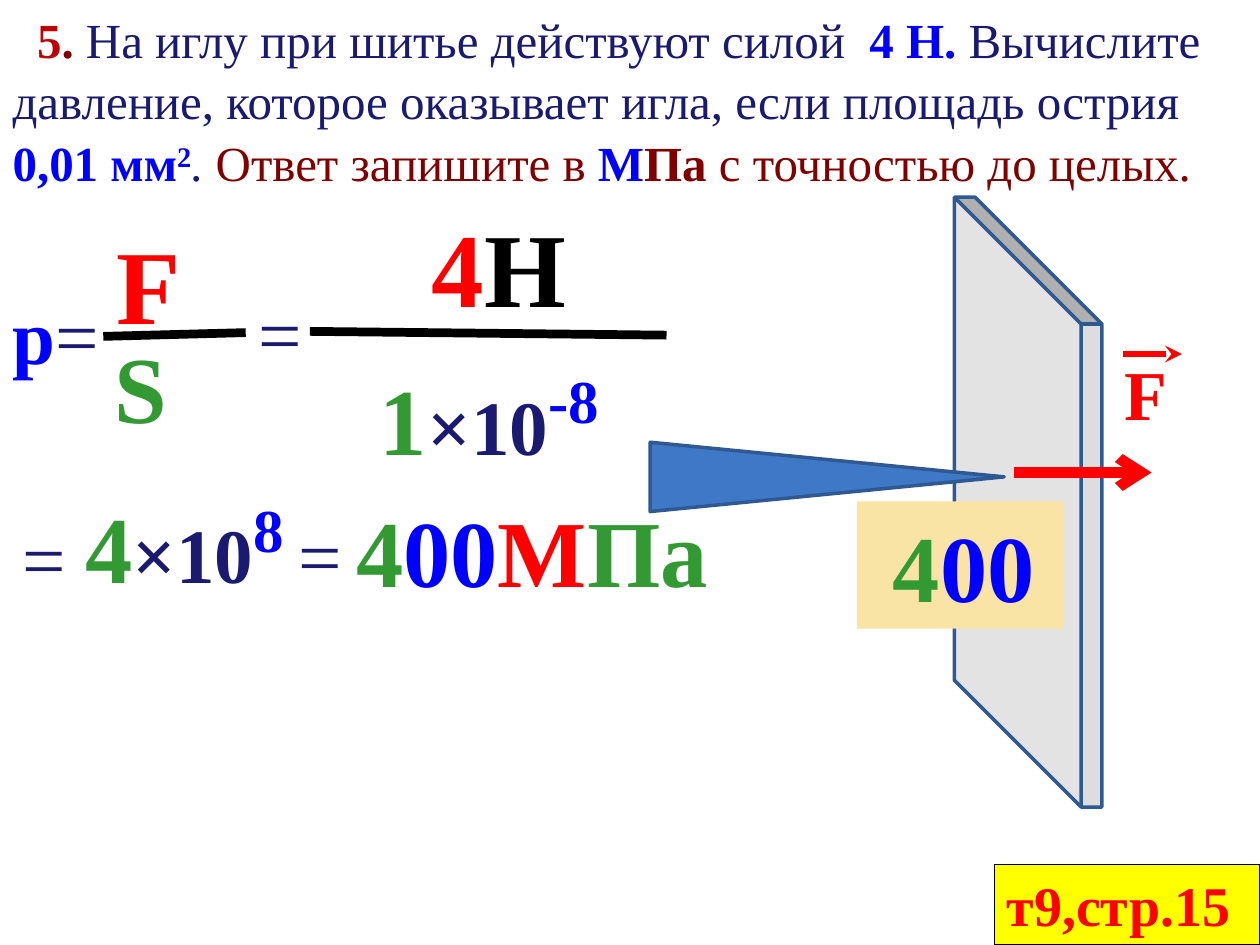
from lxml.etree import SubElement
from pptx import Presentation
from pptx.dml.color import RGBColor
from pptx.enum.shapes import MSO_CONNECTOR, MSO_SHAPE
from pptx.enum.text import MSO_ANCHOR, MSO_AUTO_SIZE, PP_ALIGN
from pptx.oxml.ns import qn
from pptx.util import Inches, Pt

WIDTH, HEIGHT = Inches(10), Inches(7.5)
COLUMNS, ROWS = 100, 75

RED = RGBColor(0xFF, 0x00, 0x00)
DARK_RED = RGBColor(0xC0, 0x00, 0x00)
MAROON = RGBColor(0x80, 0x00, 0x00)
BLUE = RGBColor(0x00, 0x00, 0xFF)
NAVY = RGBColor(0x1A, 0x1A, 0x70)
GREEN = RGBColor(0x33, 0x99, 0x33)
BLACK = RGBColor(0x00, 0x00, 0x00)
YELLOW = RGBColor(0xFF, 0xFF, 0x00)
SAND = RGBColor(0xF9, 0xE3, 0xA5)
GREY = RGBColor(0xDD, 0xDD, 0xDD)
STEEL = RGBColor(0x3E, 0x78, 0xC6)
OUTLINE = RGBColor(0x2E, 0x59, 0x92)


class Board:
    """Draws on one slide; lengths are columns and rows of a 100 by 75 grid."""

    font = "Times New Roman"

    def __init__(self, deck):
        self.slide = deck.slides.add_slide(deck.slide_layouts[5])
        self.shapes = self.slide.shapes

    def place(self, left, top, width, height):
        return (int(WIDTH * left / COLUMNS), int(HEIGHT * top / ROWS),
                int(WIDTH * width / COLUMNS), int(HEIGHT * height / ROWS))

    def fill_frame(self, frame, spans, wrap=True, size_to_text=True):
        """Fill a text frame with (text, size, colour, format) spans."""
        layout = {
            "word_wrap": wrap,
            "vertical_anchor": MSO_ANCHOR.TOP,
            "auto_size": (MSO_AUTO_SIZE.SHAPE_TO_FIT_TEXT if size_to_text
                          else MSO_AUTO_SIZE.NONE),
        }
        for name, value in layout.items():
            setattr(frame, name, value)
        para = frame.paragraphs[0]
        para.alignment = PP_ALIGN.LEFT
        for text, size, colour, *extra in spans:
            span = para.add_run()
            span.text = text
            look = {"name": self.font, "size": Pt(size), "bold": "plain" not in extra,
                    "italic": "italic" in extra}
            for name, value in look.items():
                setattr(span.font, name, value)
            span.font.color.rgb = colour
            if "super" in extra:
                span.font._element.set("baseline", "30000")
        return para

    def title(self, area, spans):
        title = self.shapes.title
        title.left, title.top, title.width, title.height = self.place(*area)
        para = self.fill_frame(title.text_frame, spans, size_to_text=False)
        spacing = {"space_before": Pt(5), "space_after": Pt(10), "line_spacing": 1.05}
        for name, value in spacing.items():
            setattr(para, name, value)

    def text(self, area, *spans, wrap=True):
        box = self.shapes.add_textbox(*self.place(*area))
        self.fill_frame(box.text_frame, spans, wrap)
        return box

    def shape(self, kind, area, fill, line=None, line_width=2, rotation=0, spans=()):
        shape = self.shapes.add_shape(kind, *self.place(*area))
        shape.shadow.inherit = False
        shape.rotation = rotation
        shape.fill.solid()
        shape.fill.fore_color.rgb = fill
        if line is None:
            shape.line.fill.background()
        else:
            shape.line.color.rgb = line
            shape.line.width = Pt(line_width)
        if spans:
            self.fill_frame(shape.text_frame, spans)
        return shape

    def line(self, start, end, colour, width, arrow=None):
        connector = self.shapes.add_connector(
            MSO_CONNECTOR.STRAIGHT, *self.place(*start, *end))
        connector.line.color.rgb = colour
        connector.line.width = Pt(width)
        if arrow:
            SubElement(connector.line._get_or_add_ln(), qn("a:tailEnd"), type=arrow)
        SubElement(connector._element.spPr, qn("a:effectLst"))
        return connector

    def group(self, *members):
        return self.shapes.add_group_shape(members)


def draw_needle_and_plate(board):
    plate = board.shape(MSO_SHAPE.CUBE, (57.4, 34, 48.4, 11.7), GREY, OUTLINE, rotation=270)
    plate.adjustments[0] = 0.86
    board.line((80.5, 37.5), (91.4, 37.5), RED, 6, "arrow")
    board.group(
        board.text((88.3, 27.3, 8.6, 7.7), ("F", 40, RED)),
        board.line((89.1, 28.1), (93.8, 28.1), RED, 3.25, "stealth"))
    board.shape(MSO_SHAPE.ISOSCELES_TRIANGLE, (62.9, 23.8, 5.5, 28.1),
                STEEL, OUTLINE, rotation=90)


def draw_solution(board):
    board.text((0, 22.3, 10.2, 8.4), ("p", 44, BLUE), ("=", 44, NAVY, "plain"))
    board.text((6.2, 16.9, 9.3, 11.1), (" F", 60, RED), wrap=False)
    board.text((6.2, 24.8, 10.2, 11.1), (" S", 54, GREEN), (" ", 60, BLACK))
    for left, top in ((19.5, 22.2), (0.8, 40), (22.7, 39.8)):
        board.text((left, top, 6.3, 8.4), ("=", 44, NAVY, "plain"))
    for start, end in (((8.2, 26.7), (19.5, 26.4)), ((24.6, 26.3), (52.9, 26.6))):
        board.line(start, end, BLACK, 5)
    board.text((31.2, 15.6, 14.9, 11.1), (" 4", 60, RED), ("H", 60, BLACK), wrap=False)
    for area, factor, power in (((27.3, 27.3, 25.8, 11.1), " 1", "-8"),
                                ((3.9, 37.5, 22.7, 11.1), " 4", "8")):
        board.text(area, (factor, 54, GREEN), ("×10", 44, NAVY), (power, 60, BLUE, "super"))


def draw_answer(board):
    answer = ((" 4", 54, GREEN), ("00", 54, BLUE))
    board.text((25.4, 37.8, 35.9, 11.1), *answer,
               ("М", 54, RED), ("Па", 54, GREEN), (" ", 60, BLACK))
    board.shape(MSO_SHAPE.RECTANGLE, (68, 39.8, 16.4, 10.1), SAND, spans=answer)
    board.shape(MSO_SHAPE.RECTANGLE, (78.9, 68.6, 21.1, 6.4), YELLOW, BLACK, 0.75,
                spans=[("т9,стр.15", 32, RED)])


def main():
    deck = Presentation()
    deck.slide_width, deck.slide_height = WIDTH, HEIGHT
    board = Board(deck)
    board.title((0, 0, 100, 15.6), [
        ("  ", 28, BLUE, "plain"),
        ("5", 28, DARK_RED),
        (". ", 28, MAROON),
        ("На иглу при шитье действуют силой  ", 28, NAVY, "plain"),
        ("4 Н. ", 28, BLUE),
        ("Вычислите давление, которое оказывает игла, если площадь острия ",
         28, NAVY, "plain"),
        ("0,01 мм", 28, BLUE),
        ("2", 28, BLUE, "super"),
        (".", 28, NAVY, "plain", "italic"),
        (" Ответ запишите в ", 28, MAROON, "plain"),
        ("М", 28, BLUE),
        ("Па", 28, MAROON),
        (" с точностью до целых.", 28, MAROON, "plain"),
    ])
    draw_needle_and_plate(board)
    draw_solution(board)
    draw_answer(board)
    deck.save("out.pptx")


if __name__ == "__main__":
    main()
